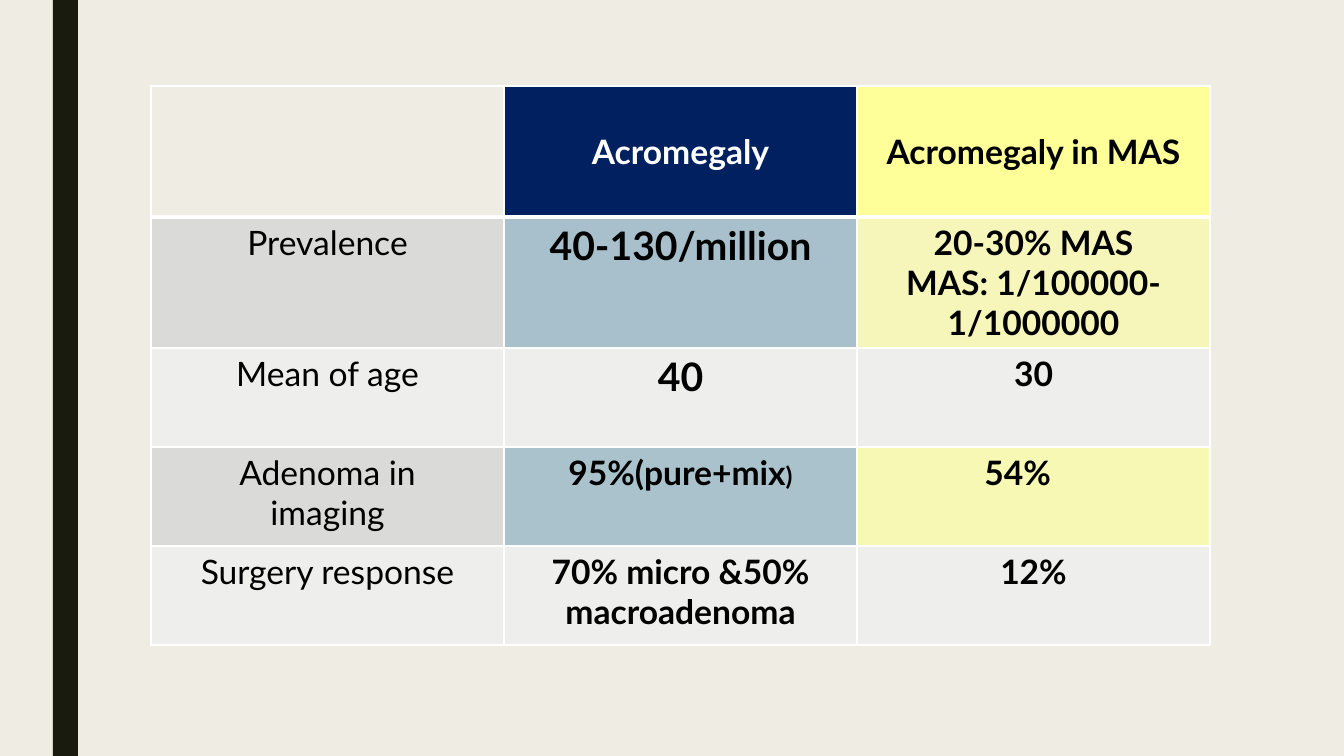
"""Build a slide with a table comparing acromegaly with acromegaly in MAS."""
from lxml import etree
from pptx import Presentation
from pptx.dml.color import RGBColor
from pptx.enum.shapes import MSO_SHAPE
from pptx.enum.text import MSO_ANCHOR, PP_ALIGN
from pptx.oxml.ns import qn
from pptx.util import Pt

RECTANGLE = MSO_SHAPE.RECTANGLE
CENTER = PP_ALIGN.CENTER
TOP, MIDDLE = MSO_ANCHOR.TOP, MSO_ANCHOR.MIDDLE

PX = 12192000 / 1344
THEME = {
    "font": "Lato",
    "page": "EFEDE3", "stripe": "191B0E", "line": "FFFFFF",
    "navy": "002060", "yellow": "FFFF99", "blue": "77A2BB",
    "dark_band": "DADBD9", "light_band": "EEEEED",
    "light_text": "FFFFFF", "dark_text": "000000",
    "small": 18, "body": 24, "large": 28,
    "thin_line": 1, "thick_line": 3,
}
COLUMN_WIDTH = 353
ROW_HEIGHTS = [131, 131, 99, 99, 99]
ROWS = [
    ["", "Acromegaly", "Acromegaly in MAS"],
    ["Prevalence", "40-130/million", "20-30% MAS\nMAS: 1/100000-1/1000000"],
    ["Mean of age", "40", "30"],
    ["Adenoma in\nimaging", "95%(pure+mix)", "54%"],
    ["Surgery response", "70% micro &50% macroadenoma", "12%"],
]
LIGHT_ROW = [("light_band", 100)] * 3
FILLS = [
    [None, ("navy", 100), ("yellow", 100)],
    [("dark_band", 100), ("blue", 59), ("yellow", 54)],
    LIGHT_ROW,
    [("dark_band", 100), ("blue", 57), ("yellow", 61)],
    LIGHT_ROW,
]
LARGE_CELLS = {(1, 1), (2, 1)}
SMALL_ENDING = (3, 1)
SHIFTED_CELL = (3, 2)
SHIFTED_MARGIN = 42


def px(length):
    return round(length * PX)


def color(name):
    return RGBColor.from_string(THEME[name])


deck = Presentation()
deck.slide_width, deck.slide_height = px(1344), px(756)
page = deck.slides.add_slide(deck.slide_layouts[6])
page.background.fill.solid()
page.background.fill.fore_color.rgb = color("page")

stripe = page.shapes.add_shape(RECTANGLE, px(53), 0, px(25), px(756))
stripe.shadow.inherit = False
stripe.fill.solid()
stripe.fill.fore_color.rgb = color("stripe")
stripe.line.fill.background()

table = page.shapes.add_table(
    len(ROWS), len(ROWS[0]), px(151), px(86),
    px(COLUMN_WIDTH * len(ROWS[0])), px(sum(ROW_HEIGHTS))).table
table.first_row = table.horz_banding = False
for column in table.columns:
    column.width = px(COLUMN_WIDTH)

for row, texts in enumerate(ROWS):
    table.rows[row].height = px(ROW_HEIGHTS[row])
    for col, text in enumerate(texts):
        cell = table.cell(row, col)
        cell.vertical_anchor = MIDDLE if row == 0 else TOP
        if (row, col) == SHIFTED_CELL:
            cell.margin_right = px(SHIFTED_MARGIN)

        properties = cell._tc.get_or_add_tcPr()
        for side in "LRTB":
            thick = (row, side) in {(0, "B"), (1, "T")}
            width = THEME["thick_line" if thick else "thin_line"]
            border = etree.SubElement(properties, qn(f"a:ln{side}"), w=str(Pt(width)))
            paint = etree.SubElement(border, qn("a:solidFill"))
            etree.SubElement(paint, qn("a:srgbClr"), val=THEME["line"])

        if FILLS[row][col] is None:
            cell.fill.background()
        else:
            name, opacity = FILLS[row][col]
            cell.fill.solid()
            cell.fill.fore_color.rgb = color(name)
            if opacity < 100:
                shade = properties.find(qn("a:solidFill")).find(qn("a:srgbClr"))
                etree.SubElement(shade, qn("a:alpha"), val=str(opacity * 1000))

        size = "large" if (row, col) in LARGE_CELLS else "body"
        font_format = {
            "name": THEME["font"],
            "size": Pt(THEME[size]),
            "bold": row == 0 or col > 0,
        }
        ink = color("light_text" if (row, col) == (0, 1) else "dark_text")
        cell.text = text
        for para in cell.text_frame.paragraphs:
            para.alignment = CENTER
            if (row, col) == SMALL_ENDING:
                para.runs[0].text = text[:-1]
                para.add_run().text = text[-1]
            for span in para.runs:
                for key, value in font_format.items():
                    setattr(span.font, key, value)
                span.font.color.rgb = ink
            if (row, col) == SMALL_ENDING:
                para.runs[-1].font.size = Pt(THEME["small"])

deck.save("out.pptx")
